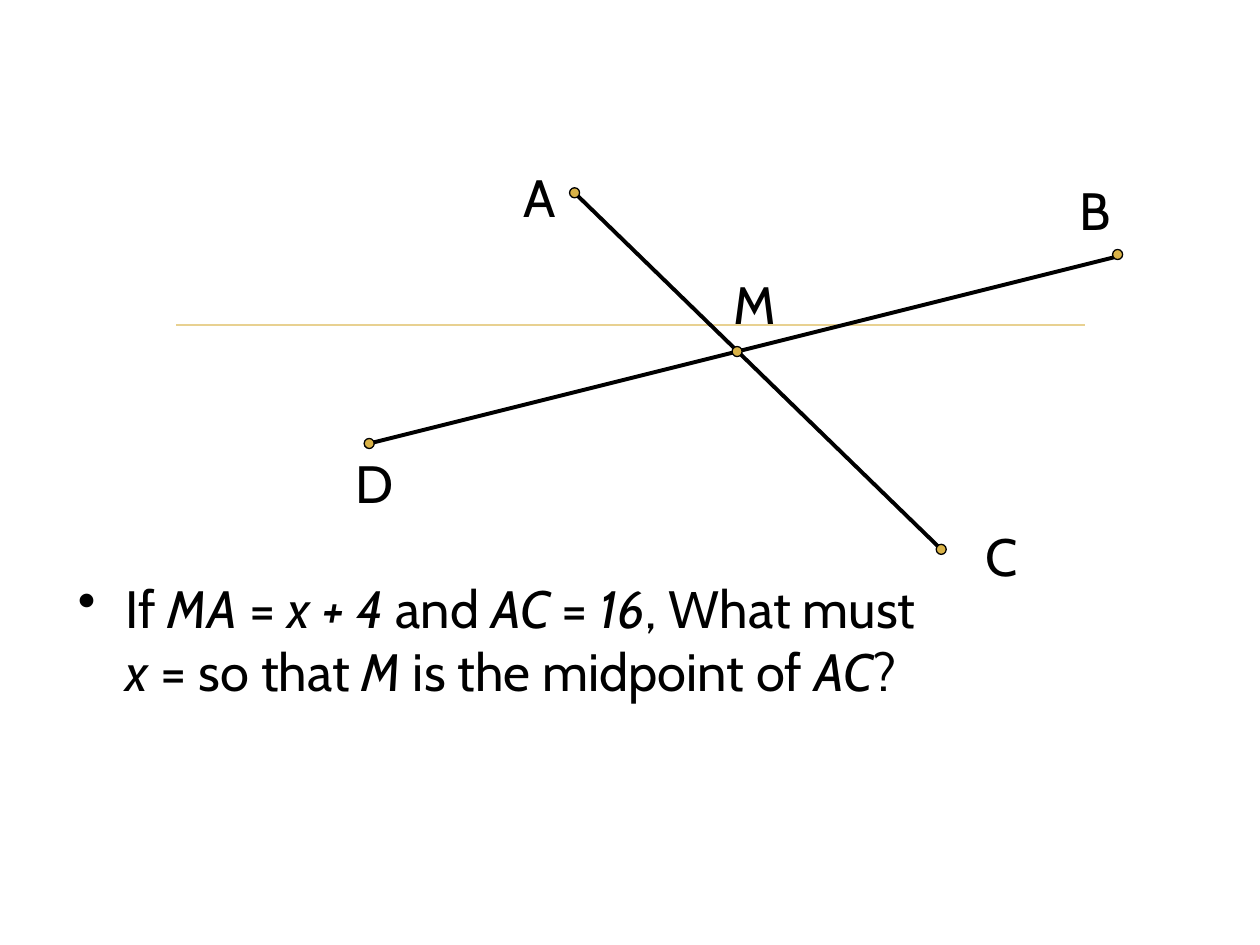
from dataclasses import dataclass

from lxml import etree
from pptx import Presentation
from pptx import util as u
from pptx.dml.color import RGBColor
from pptx.enum import shapes, text
from pptx.oxml.ns import qn

COLORS = {"ink": "000000", "gold": "D9B247", "rule": "E8D191", "paper": "FFFFFF"}
FONT = {"name": "Cabin", "size": u.Pt(30)}
CELL = u.Inches(0.1)  # grid of 100 columns by 75 rows
COLS, ROWS = 100, 75
DOT = 0.8


@dataclass
class Segment:
    x1: float
    y1: float
    x2: float
    y2: float
    color: str = "ink"
    weight: float = 2.25


@dataclass
class Label:
    text: str
    col: float
    row: float
    width: float = 11.7
    height: float = 7.5
    wrap: bool = True


def grid(*cells: float) -> list[int]:
    return [round(c * CELL) for c in cells]


def rgb(name: str) -> RGBColor:
    return RGBColor.from_string(COLORS[name])


def draw_segment(parent, seg: Segment) -> None:
    c = parent.add_connector(shapes.MSO_CONNECTOR.STRAIGHT,
                             *grid(seg.x1, seg.y1, seg.x2, seg.y2))
    c.line.color.rgb = rgb(seg.color)
    c.line.width = u.Pt(seg.weight)
    etree.SubElement(c._element.spPr, qn("a:effectLst"))


def draw_dot(parent, col: float, row: float) -> None:
    """Draw a point marker centred on a grid position."""
    sp = parent.add_shape(shapes.MSO_SHAPE.OVAL,
                          *grid(col - DOT / 2, row - DOT / 2, DOT, DOT))
    sp.shadow.inherit = False
    sp.fill.solid()
    sp.fill.fore_color.rgb = rgb("gold")
    sp.line.color.rgb = rgb("ink")
    sp.line.width = u.Pt(0.75)


def add_run(p, words: str, italic: bool = False) -> None:
    r = p.add_run()
    r.text = words
    for name, value in {**FONT, "italic": italic}.items():
        setattr(r.font, name, value)
    r.font.color.rgb = rgb("ink")


def draw_label(parent, label: Label):
    """Draw a text box and return its first paragraph."""
    tf = parent.add_textbox(
        *grid(label.col, label.row, label.width, label.height)).text_frame
    tf.word_wrap = label.wrap
    tf.vertical_anchor = text.MSO_ANCHOR.TOP
    p = tf.paragraphs[0]
    if label.text:
        add_run(p, label.text)
    return p


def add_bullet(p, indent: float) -> None:
    pPr = p._p.get_or_add_pPr()
    pPr.set("marL", str(u.Inches(indent)))
    pPr.set("indent", str(-u.Inches(indent)))
    color = etree.SubElement(pPr, qn("a:buClr"))
    etree.SubElement(color, qn("a:srgbClr"), val=COLORS["ink"])
    etree.SubElement(pPr, qn("a:buChar"), char="•")


RULE = Segment(14, 25.8, 86.1, 25.8, "rule", 1.25)
SEGMENTS = [Segment(28.9, 35.3, 88.9, 20.3),   # DB
            Segment(45.6, 15.3, 74.7, 43.6)]   # AC
DOTS = {"D": (29.3, 35.2), "A": (45.6, 15.3), "C": (74.7, 43.6),
        "B": (88.7, 20.2), "M": (58.5, 27.9)}
LABELS = [Label("B", 84.7, 13.6), Label("C", 77.2, 41.1, height=6.7),
          Label("D", 27.2, 35.3), Label("M", 57.2, 21.1),
          Label("A", 40.6, 12.6, 4.5, 6, wrap=False)]
# Upright and italic pieces alternate
QUESTION = ["If ", "MA", " = ", "x + 4 ", "and ", "AC", " = ", "16",
            ", What must ", "x", " = so that ", "M",
            " is the midpoint of ", "AC", "?"]


def main() -> None:
    prs = Presentation()
    prs.slide_width, prs.slide_height = grid(COLS, ROWS)
    s = prs.slides.add_slide(prs.slide_layouts[6])
    s.background.fill.solid()
    s.background.fill.fore_color.rgb = rgb("paper")

    # Rule behind the figure
    draw_segment(s.shapes, RULE)

    # Crossing segments with their points and letters
    figure = s.shapes.add_group_shape().shapes
    for seg in SEGMENTS:
        draw_segment(figure, seg)
    for col, row in DOTS.values():
        draw_dot(figure, col, row)
    for label in LABELS:
        draw_label(figure, label)

    # Question
    p = draw_label(s.shapes, Label("", 5.2, 45.2, 70.2, 26.9))
    add_bullet(p, 0.38)
    for i, words in enumerate(QUESTION):
        add_run(p, words, italic=i % 2 == 1)

    prs.save("out.pptx")


if __name__ == "__main__":
    main()
